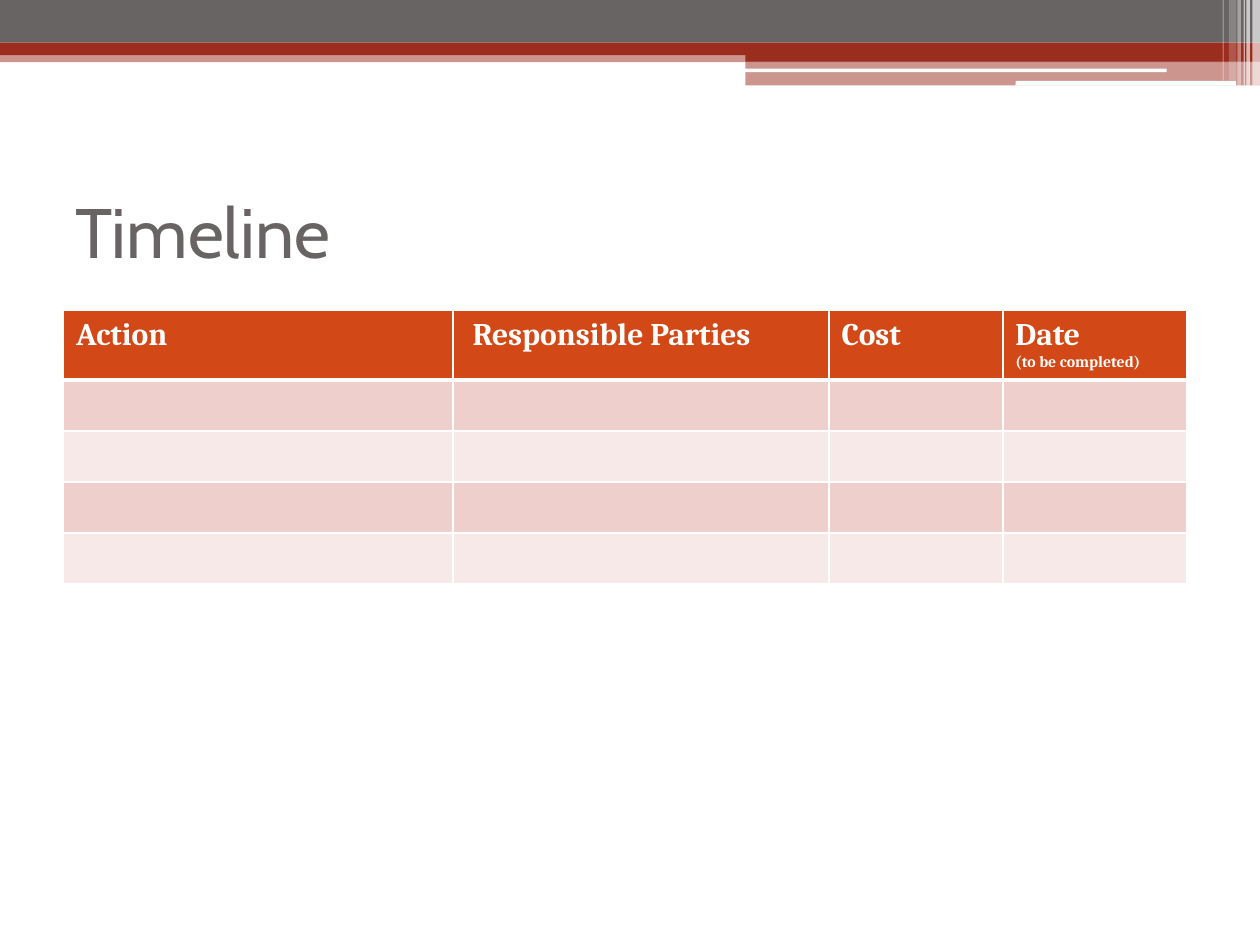
from lxml.etree import SubElement
from pptx import Presentation
from pptx.dml.color import RGBColor
from pptx.enum.shapes import MSO_SHAPE
from pptx.enum.text import MSO_ANCHOR
from pptx.oxml.ns import qn
from pptx.util import Pt

WHITE = RGBColor(0xFF, 0xFF, 0xFF)
GRAY = RGBColor(0x69, 0x64, 0x64)
RED = RGBColor(0x9B, 0x2D, 0x1F)
ORANGE = RGBColor(0xD3, 0x48, 0x17)
BANDS = (RGBColor(0xEF, 0xCF, 0xCC), RGBColor(0xF7, 0xE9, 0xE8))

TITLE_FONT = {"name": "Cabin", "size": Pt(40)}
HEADING_FONT = {"name": "Cambria", "size": Pt(18), "bold": True}
NOTE_FONT = {**HEADING_FONT, "size": Pt(9)}

BANNER_BARS = (
    (0, 28.8, 720, 6.7, RED, 50),
    (0, 0, 720, 24.4, GRAY, 100),
    (0, 24.4, 720, 7.1, RED, 100),
    (425.9, 28, 294.1, 7.2, RED, 100),
    (425.9, 35.2, 294.1, 13.6, RED, 50),
)
BANNER_SLITS = ((425.5, 39.2, 241.2, 2), (580.3, 46.2, 126, 2.7))
BANNER_STRIPES = (
    (715.6, 4.4, 48.96, 65),
    (712.2, 2, 48.96, 65),
    (710.7, 0.7, 48.96, 60),
    (707.1, 2, 48.96, 40),
    (702.2, 4.3, 46.1, 20),
    (698.7, 0.7, 46.1, 30),
)

COLUMN_WIDTHS = (222.5, 215, 99.3, 105.1)
ROW_HEIGHTS = (38,) + (29.2,) * 4
HEADINGS = (
    ("Action",),
    ("Responsible Parties",),
    ("Cost",),
    ("Date", "(to be completed)"),
)
HEADING_INDENTS = (7.2, 11.2, 7.2, 7.2)


def set_format(target, values):
    """Set each named value as an attribute of the target."""
    for name, value in values.items():
        setattr(target, name, value)


def write_paragraph(paragraph, text, font_values, color):
    """Write one formatted run into a paragraph."""
    run = paragraph.add_run()
    run.text = text
    set_format(run.font, font_values)
    run.font.color.rgb = color


def add_bar(slide, box, color, opacity=100, kind=MSO_SHAPE.RECTANGLE):
    """Add a plain filled bar, opacity being a percentage."""
    shape = slide.shapes.add_shape(kind, *(Pt(length) for length in box))
    shape.shadow.inherit = False
    shape.line.fill.background()
    shape.fill.solid()
    shape.fill.fore_color.rgb = color
    if opacity < 100:
        color_element = shape.fill._xPr.find(f".//{qn('a:srgbClr')}")
        SubElement(color_element, qn("a:alpha"), val=str(opacity * 1000))


def add_banner(slide, left, top):
    """Draw the bars, slits and stripes along the head of the slide."""
    for x, y, width, height, color, opacity in BANNER_BARS:
        add_bar(slide, (left + x, top + y, width, height), color, opacity)
    for x, y, width, height in BANNER_SLITS:
        box = (left + x, top + y, width, height)
        add_bar(slide, box, WHITE, kind=MSO_SHAPE.ROUNDED_RECTANGLE)
    for x, width, height, opacity in BANNER_STRIPES:
        add_bar(slide, (left + x, top, width, height), WHITE, opacity)


def add_title(slide, left, top, width, height):
    """Add the slide title, centred vertically in its box."""
    box = slide.shapes.add_textbox(Pt(left), Pt(top), Pt(width), Pt(height))
    frame = box.text_frame
    set_format(frame, {"word_wrap": True, "vertical_anchor": MSO_ANCHOR.MIDDLE})
    write_paragraph(frame.paragraphs[0], "Timeline", TITLE_FONT, GRAY)


def style_cell(cell, color, bottom_width):
    """Give a cell white borders and a solid fill."""
    properties = cell._tc.get_or_add_tcPr()
    borders = {"lnL": 1, "lnR": 1, "lnT": 1, "lnB": bottom_width}
    for side, width in borders.items():
        line = SubElement(properties, qn(f"a:{side}"), w=str(Pt(width)))
        fill = SubElement(line, qn("a:solidFill"))
        SubElement(fill, qn("a:srgbClr"), val=str(WHITE))
    cell.fill.solid()
    cell.fill.fore_color.rgb = color


def add_timeline_table(slide, left, top):
    """Add the action table with its headings and banded empty rows."""
    table = slide.shapes.add_table(
        len(ROW_HEIGHTS), len(COLUMN_WIDTHS), Pt(left), Pt(top),
        Pt(sum(COLUMN_WIDTHS)), Pt(sum(ROW_HEIGHTS)),
    ).table
    for column, width in zip(table.columns, COLUMN_WIDTHS):
        column.width = Pt(width)
    for index, (row, height) in enumerate(zip(table.rows, ROW_HEIGHTS)):
        row.height = Pt(height)
        for cell in row.cells:
            if index == 0:
                style_cell(cell, ORANGE, 3)
            else:
                style_cell(cell, BANDS[(index - 1) % 2], 3 if index == 0 else 1)
    for cell, lines, indent in zip(table.rows[0].cells, HEADINGS, HEADING_INDENTS):
        cell.margin_left = Pt(indent)
        frame = cell.text_frame
        write_paragraph(frame.paragraphs[0], lines[0], HEADING_FONT, WHITE)
        for note in lines[1:]:
            write_paragraph(frame.add_paragraph(), note, NOTE_FONT, WHITE)


def main():
    """Build the timeline slide and save it."""
    presentation = Presentation()
    set_format(presentation, {"slide_width": Pt(720), "slide_height": Pt(540)})
    slide = presentation.slides.add_slide(presentation.slide_layouts[6])
    add_banner(slide, 0, 0)
    add_title(slide, 36, 90, 648, 84)
    add_timeline_table(slide, 36.3, 177.4)
    presentation.save("out.pptx")


if __name__ == "__main__":
    main()
